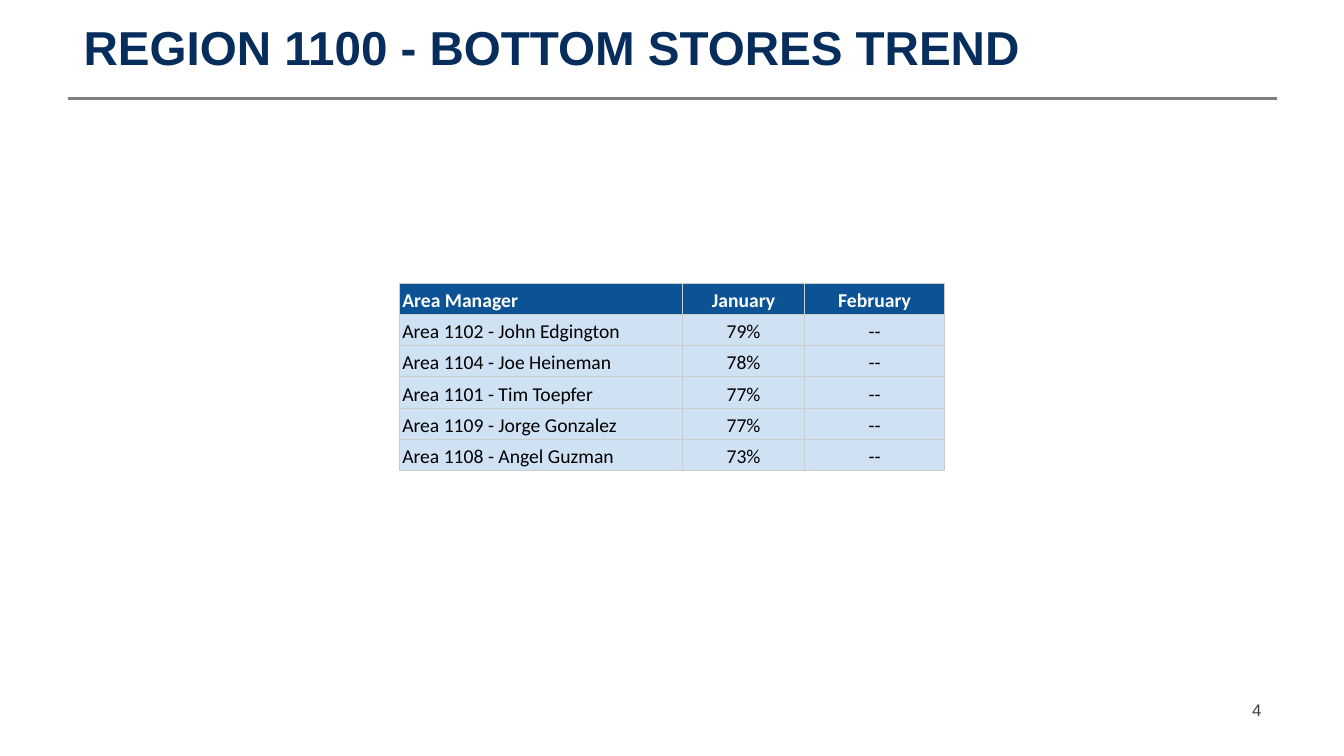
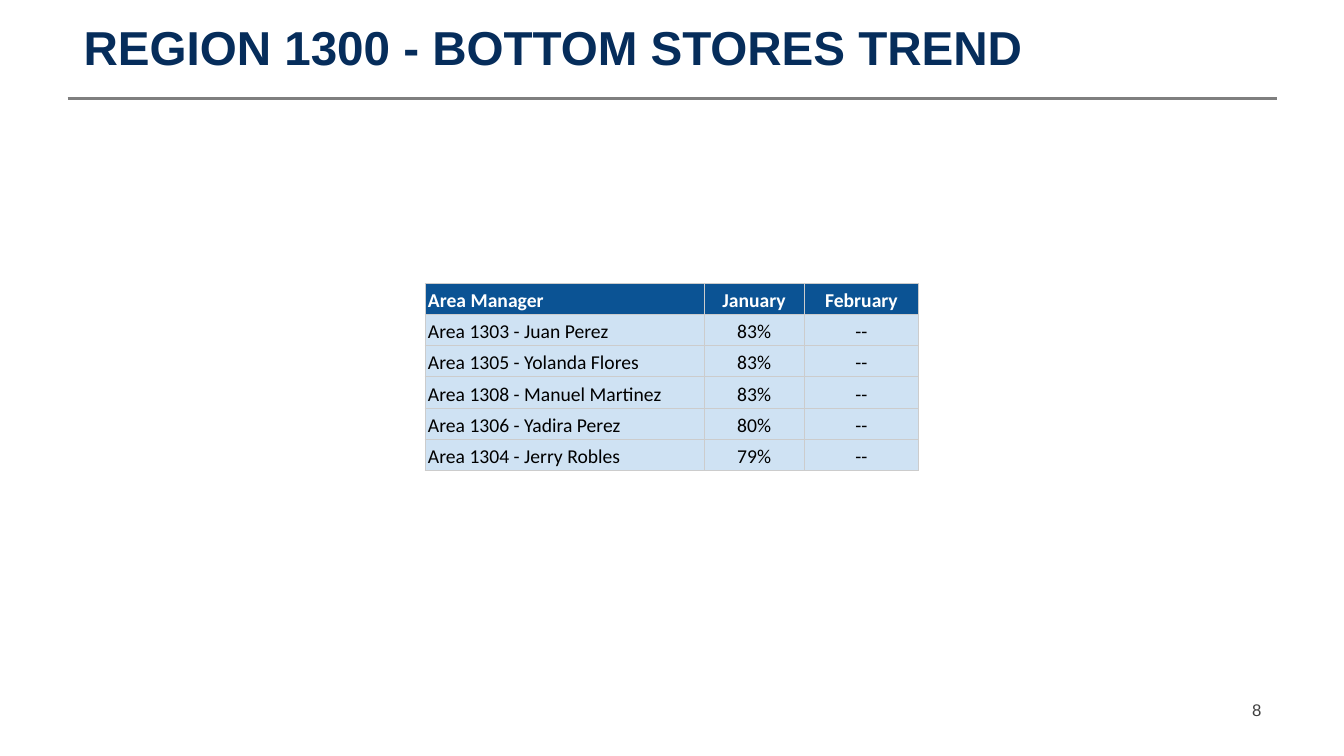
from dataclasses import dataclass

from lxml import etree
from pptx import Presentation
from pptx import util as u
from pptx.dml.color import RGBColor
from pptx.enum import shapes, text
from pptx.oxml import ns

COLORS = {
    "title": "062D5B",
    "rule": "7F7F7F",
    "number": "3F3F3F",
    "header": "0B5394",
    "body": "CFE2F3",
    "border": "CCCCCC",
    "white": "FFFFFF",
    "black": "000000",
}
SLIDE_W, SLIDE_H = 13.33, 7.5
MARGIN, CONTENT_W = 0.67, 12
TABLE_TOP, ROW_H = 2.81, 0.31
HEADERS = ("Area Manager", "January", "February")
NO_VALUE = "--"


@dataclass(frozen=True)
class Region:
    number: int
    page: int
    col_widths: tuple[float, ...]
    january: tuple[tuple[str, str], ...]


REGIONS = (
    Region(1100, 4, (2.81, 1.21, 1.39), (
        ("Area 1102 - John Edgington", "79%"),
        ("Area 1104 - Joe Heineman", "78%"),
        ("Area 1101 - Tim Toepfer", "77%"),
        ("Area 1109 - Jorge Gonzalez", "77%"),
        ("Area 1108 - Angel Guzman", "73%"),
    )),
    Region(1300, 8, (2.77, 0.99, 1.14), (
        ("Area 1303 - Juan Perez", "83%"),
        ("Area 1305 - Yolanda Flores", "83%"),
        ("Area 1308 - Manuel Martinez", "83%"),
        ("Area 1306 - Yadira Perez", "80%"),
        ("Area 1304 - Jerry Robles", "79%"),
    )),
)


def rgb(name: str) -> RGBColor:
    return RGBColor.from_string(COLORS[name])


def write(tf, content: str, *, size: float, color: str, font: str = "Arial",
          bold: bool = False, align=text.PP_ALIGN.LEFT,
          spacing: float = 1.0) -> None:
    p = tf.paragraphs[0]
    p.alignment = align
    p.line_spacing = spacing
    r = p.add_run()
    r.text = content
    r.font.name = font
    r.font.size = u.Pt(size)
    r.font.bold = bold
    r.font.color.rgb = rgb(color)


def set_insets(box, horizontal: float, vertical: float) -> None:
    box.margin_left = box.margin_right = u.Inches(horizontal)
    box.margin_top = box.margin_bottom = u.Inches(vertical)


def add_text(s, content: str, left: float, top: float, width: float,
             height: float, *, inset_y: float, anchor, **fmt) -> None:
    sp = s.shapes.add_textbox(*map(u.Inches, (left, top, width, height)))
    tf = sp.text_frame
    tf.word_wrap = True
    tf.vertical_anchor = anchor
    set_insets(tf, 0.16, inset_y)
    write(tf, content, **fmt)


def add_rule(s) -> None:
    ends = (MARGIN, 0.98, MARGIN + CONTENT_W, 0.98)
    line = s.shapes.add_connector(shapes.MSO_CONNECTOR.STRAIGHT, *map(u.Inches, ends))
    line.line.color.rgb = rgb("rule")
    line.line.width = u.Pt(2)
    etree.SubElement(line._element.spPr, ns.qn("a:effectLst"))


def add_borders(cell) -> None:
    tc_pr = cell._tc.get_or_add_tcPr()
    for side in ("L", "R", "T", "B"):
        ln = etree.SubElement(tc_pr, ns.qn(f"a:ln{side}"), w=str(u.Pt(0.75)))
        fill = etree.SubElement(ln, ns.qn("a:solidFill"))
        etree.SubElement(fill, ns.qn("a:srgbClr"), val=COLORS["border"])


def format_cell(cell, content: str, *, header: bool, centered: bool) -> None:
    add_borders(cell)
    cell.fill.solid()
    cell.fill.fore_color.rgb = rgb("header" if header else "body")
    cell.vertical_anchor = text.MSO_ANCHOR.BOTTOM
    set_insets(cell, 0.03, 0.02)
    write(cell.text_frame, content, size=14, font="Calibri", bold=header,
          color="white" if header else "black", spacing=1.15,
          align=text.PP_ALIGN.CENTER if centered else text.PP_ALIGN.LEFT)


def add_trend_table(s, region: Region) -> None:
    rows = [HEADERS, *((area, score, NO_VALUE) for area, score in region.january)]
    width = sum(region.col_widths)
    frame = ((SLIDE_W - width) / 2, TABLE_TOP, width, ROW_H * len(rows))
    table = s.shapes.add_table(len(rows), len(HEADERS), *map(u.Inches, frame)).table
    table.horz_banding = False
    for column, col_width in zip(table.columns, region.col_widths):
        column.width = u.Inches(col_width)
    for i, row in enumerate(rows):
        table.rows[i].height = u.Inches(ROW_H)
        for j, content in enumerate(row):
            format_cell(table.cell(i, j), content, header=i == 0, centered=j > 0)


def add_region_slide(prs, region: Region) -> None:
    s = prs.slides.add_slide(prs.slide_layouts[6])
    add_rule(s)
    add_text(s, f"REGION {region.number} - BOTTOM STORES TREND",
             MARGIN, 0.31, CONTENT_W, 0.59, inset_y=0.16,
             anchor=text.MSO_ANCHOR.BOTTOM, size=34, color="title",
             bold=True, spacing=0.8)
    add_trend_table(s, region)
    add_text(s, str(region.page), 9.56, 6.84, 3.11, 0.4, inset_y=0.08,
             anchor=text.MSO_ANCHOR.MIDDLE, size=12, color="number",
             align=text.PP_ALIGN.RIGHT)


def main() -> None:
    prs = Presentation()
    prs.slide_width = u.Inches(SLIDE_W)
    prs.slide_height = u.Inches(SLIDE_H)
    for region in REGIONS:
        add_region_slide(prs, region)
    prs.save("out.pptx")


if __name__ == "__main__":
    main()
